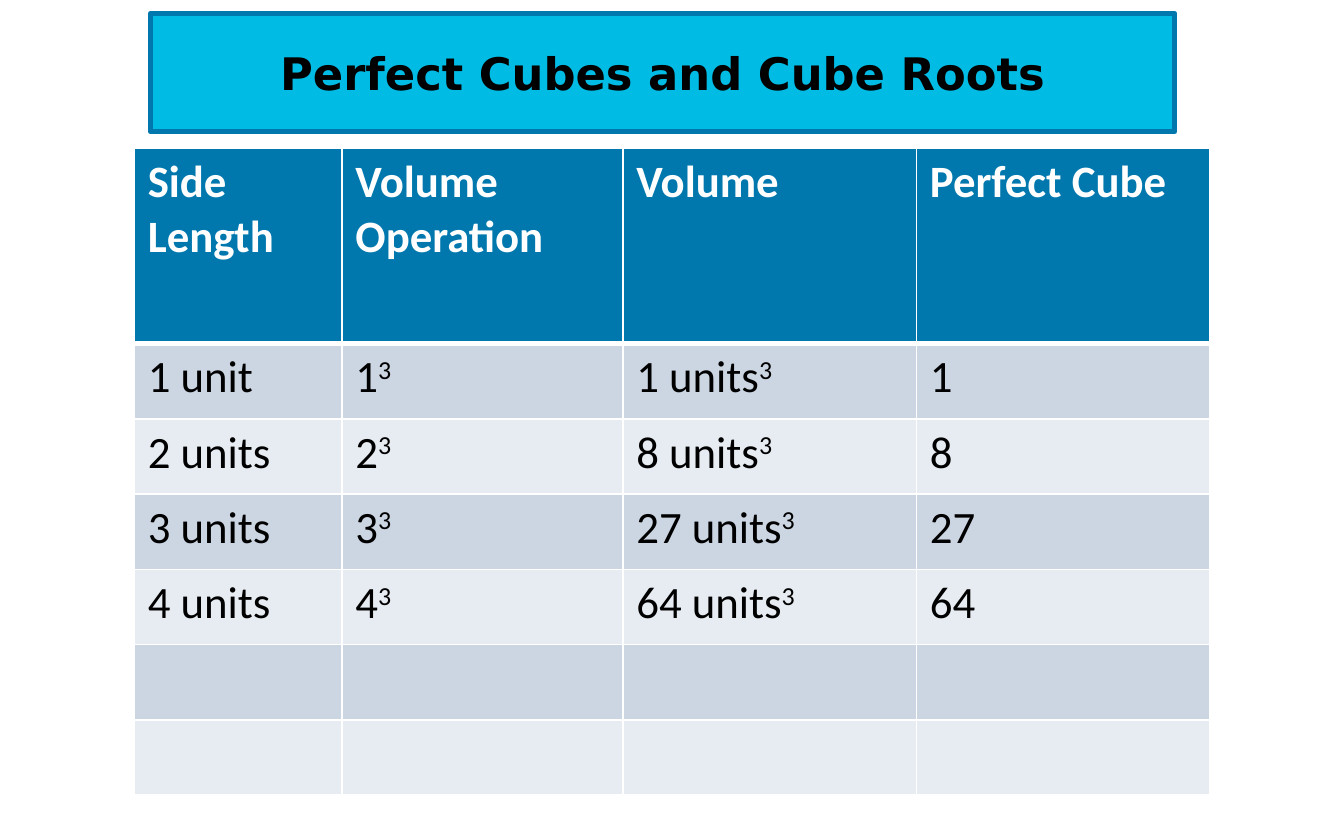
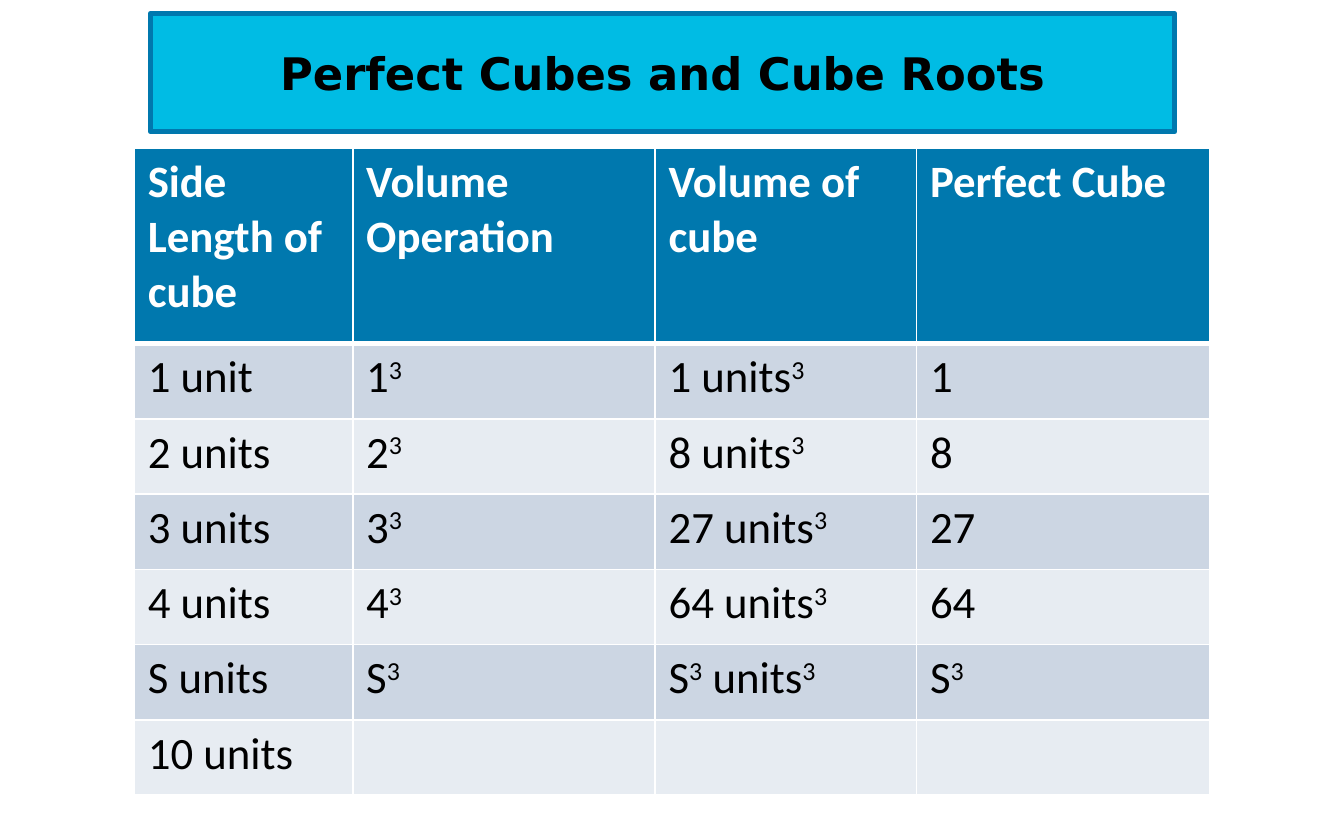
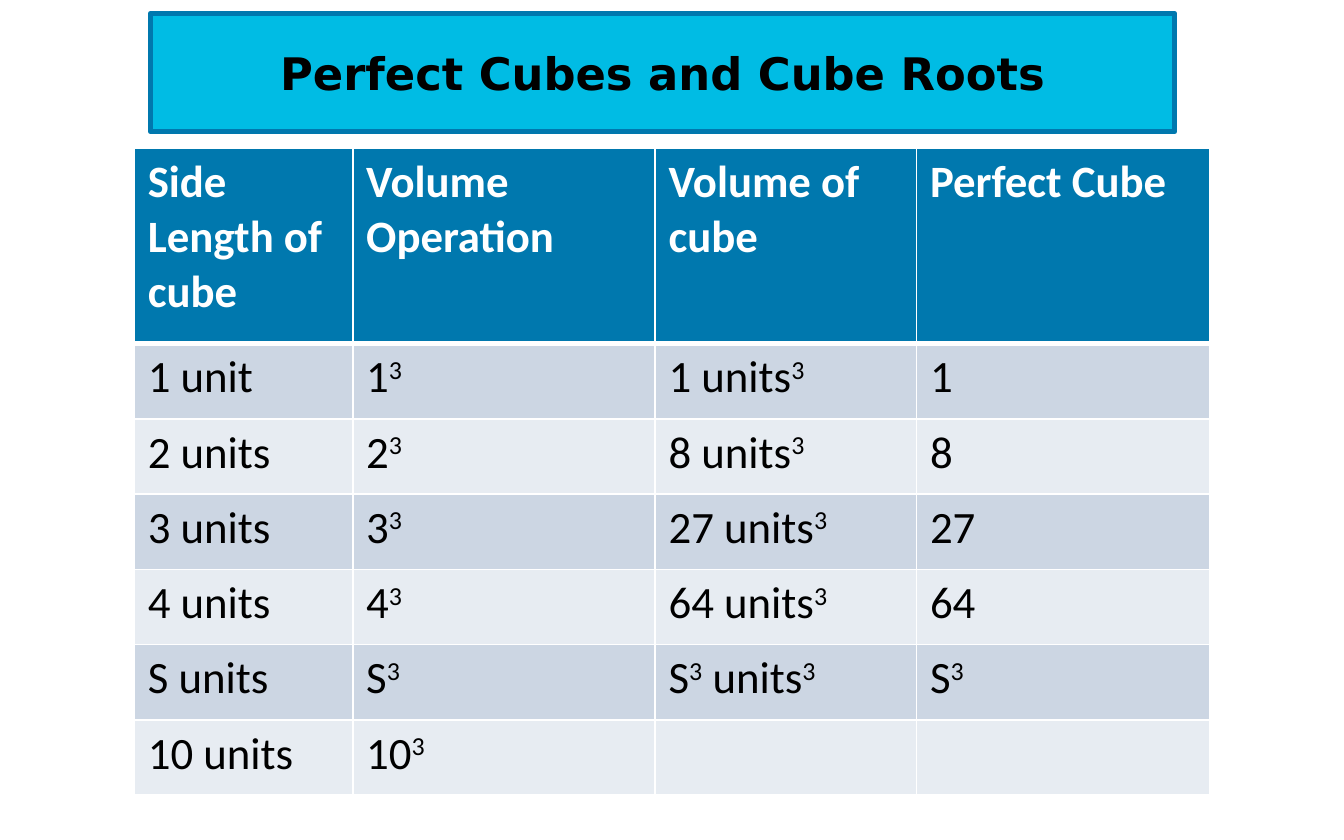
"""Build three slides that develop a table of perfect cubes."""
from dataclasses import dataclass
from itertools import groupby

from lxml import etree
from pptx import Presentation
from pptx.dml.color import RGBColor
from pptx.enum.shapes import MSO_SHAPE
from pptx.enum.text import MSO_ANCHOR, PP_ALIGN
from pptx.oxml.ns import qn
from pptx.util import Inches, Pt

RECTANGLE = MSO_SHAPE.RECTANGLE
MIDDLE = MSO_ANCHOR.MIDDLE
LEFT, CENTER = PP_ALIGN.LEFT, PP_ALIGN.CENTER

WIDTH, HEIGHT = Inches(10), Inches(6.25)
COLORS = {
    "band": "00BCE4",
    "header": "0078AE",
    "odd": "CCD6E3",
    "even": "E7ECF2",
    "ink": "000000",
    "white": "FFFFFF",
}
TITLE = "Perfect Cubes and Cube Roots"
TITLE_FONT, TABLE_FONT = "DejaVu Sans", "Calibri"
TEXT_SIZE = 24
THIN, THICK = 1, 3
HEADER_HEIGHT, BODY_HEIGHT = 23.2, 8.96
SUPERSCRIPT = "³"

Row = tuple[str, str, str, str]


@dataclass(frozen=True)
class Area:
    """Place on the slide, in percent of its width and height."""

    left: float
    top: float
    width: float
    height: float

    def lengths(self) -> tuple[int, int, int, int]:
        """Return left, top, width and height as slide lengths."""
        return across(self.left), down(self.top), across(self.width), down(self.height)


@dataclass(frozen=True)
class CubeTable:
    """Column widths in percent, headings and body rows of one table."""

    columns: tuple[float, ...]
    headings: Row
    body: list[Row]


def across(percent: float) -> int:
    """Convert a share of the slide width to a length."""
    return round(WIDTH * percent / 100)


def down(percent: float) -> int:
    """Convert a share of the slide height to a length."""
    return round(HEIGHT * percent / 100)


def color(name: str) -> RGBColor:
    """Look up a named colour."""
    return RGBColor.from_string(COLORS[name])


def write(frame, text: str, *, font: str = TABLE_FONT, ink: str = "ink",
          bold: bool = False, align: PP_ALIGN = LEFT) -> None:
    """Write one paragraph, raising each superscript sign as a real exponent."""
    para = frame.paragraphs[0]
    para.alignment = align
    for raised, letters in groupby(text, lambda letter: letter == SUPERSCRIPT):
        span = para.add_run()
        span.text = "".join(letters).replace(SUPERSCRIPT, "3")
        span.font.name = font
        span.font.size = Pt(TEXT_SIZE)
        span.font.bold = bold
        span.font.color.rgb = color(ink)
        if raised:
            span.font._element.set("baseline", "30000")


def draw_title(page) -> None:
    """Draw the title band."""
    box = page.shapes.add_shape(RECTANGLE, *Area(11.2, 1.6, 76.2, 14.08).lengths())
    box.shadow.inherit = False
    box.fill.solid()
    box.fill.fore_color.rgb = color("band")
    box.line.color.rgb = color("header")
    box.line.width = Pt(THICK)
    box.text_frame.word_wrap = True
    box.text_frame.vertical_anchor = MIDDLE
    write(box.text_frame, TITLE, font=TITLE_FONT, bold=True, align=CENTER)


def draw_borders(cell, top: int, bottom: int) -> None:
    """Give a cell white borders of the given top and bottom widths."""
    properties = cell._tc.get_or_add_tcPr()
    for side, width in (("L", THIN), ("R", THIN), ("T", top), ("B", bottom)):
        border = etree.SubElement(properties, qn(f"a:ln{side}"), w=str(Pt(width)))
        fill = etree.SubElement(border, qn("a:solidFill"))
        etree.SubElement(fill, qn("a:srgbClr"), val=COLORS["white"])


def draw_table(page, content: CubeTable) -> None:
    """Draw the table with its header and banded body rows."""
    rows = [content.headings, *content.body]
    area = Area(10, 17.7, sum(content.columns),
                HEADER_HEIGHT + BODY_HEIGHT * len(content.body))
    table = page.shapes.add_table(len(rows), len(content.columns), *area.lengths()).table
    for column, width in zip(table.columns, content.columns):
        column.width = across(width)
    for index, texts in enumerate(rows):
        header = index == 0
        table.rows[index].height = down(HEADER_HEIGHT if header else BODY_HEIGHT)
        fill = "header" if header else "odd" if index % 2 else "even"
        for position, text in enumerate(texts):
            cell = table.cell(index, position)
            draw_borders(cell, THICK if index == 1 else THIN, THICK if header else THIN)
            cell.fill.solid()
            cell.fill.fore_color.rgb = color(fill)
            write(cell.text_frame, text, ink="white" if header else "ink", bold=header)


def number_row(side: int) -> Row:
    """Work out the table row for a cube with a whole-number side."""
    unit = "unit" if side == 1 else "units"
    return f"{side} {unit}", f"{side}³", f"{side ** 3} units³", f"{side ** 3}"


def cube_tables() -> list[CubeTable]:
    """Describe the table of each slide."""
    numbers = [number_row(side) for side in range(1, 5)]
    blank = ("", "", "", "")
    general = ("S units", "S³", "S³ units³", "S³")
    columns = (16.25, 22.5, 19.45, 21.8)
    headings = ("Side Length of cube", "Volume Operation", "Volume of cube", "Perfect Cube")
    return [
        CubeTable((15.45, 20.9, 21.85, 21.8),
                  ("Side Length", "Volume Operation", "Volume", "Perfect Cube"),
                  [*numbers, blank, blank]),
        *(CubeTable(columns, headings, [*numbers, general, ("10 units", power, "", "")])
          for power in ("", "10³")),
    ]


def main() -> None:
    """Build and save the deck."""
    deck = Presentation()
    deck.slide_width, deck.slide_height = WIDTH, HEIGHT
    for content in cube_tables():
        page = deck.slides.add_slide(deck.slide_layouts[6])
        draw_title(page)
        draw_table(page, content)
    deck.save("out.pptx")


if __name__ == "__main__":
    main()
